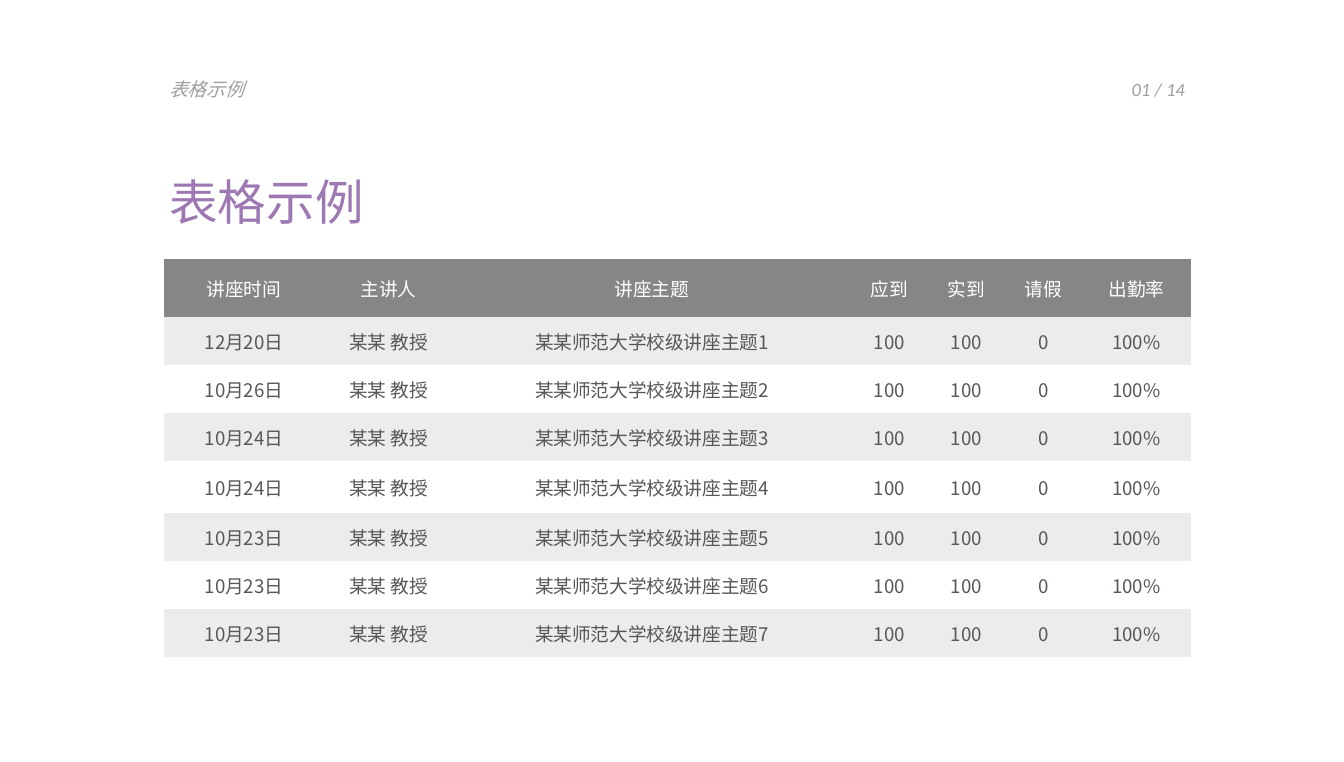
from pptx import Presentation
from pptx.dml.color import RGBColor
from pptx.enum.text import MSO_ANCHOR, MSO_AUTO_SIZE, PP_ALIGN
from pptx.oxml.ns import qn
from pptx.util import Emu, Pt

SCALE = 914400 / 134.4
CJK = "Noto Sans CJK SC"
NO_STYLE = "{2D5ABB26-0587-4C30-8999-92F81FD0307C}"
COLORS = {
    "header": "858687",
    "band": "EDECEC",
    "white": "FFFFFF",
    "text": "555759",
    "muted": "9E9FA0",
    "accent": "9E78B3",
}
COLUMNS = {
    "讲座时间": 160,
    "主讲人": 129,
    "讲座主题": 398,
    "应到": 77,
    "实到": 77,
    "请假": 77,
    "出勤率": 109,
}
ROW_HEIGHTS = [58, 48, 48, 48, 52, 48, 48, 48]
DATES = ["12月20日", "10月26日", "10月24日", "10月24日", "10月23日", "10月23日", "10月23日"]


def px(n):
    """Turn px into EMU."""
    return Emu(round(n * SCALE))


def set_attrs(obj, values):
    """Set each attribute of obj from a dict."""
    for name, value in values.items():
        setattr(obj, name, value)


def write(tf, text, color, size=10, font=CJK, italic=False, align=PP_ALIGN.LEFT):
    """Write one formatted line and return its paragraph."""
    p = tf.paragraphs[0]
    p.alignment = align
    r = p.add_run()
    r.text = text
    set_attrs(r.font, {"size": Pt(size), "name": font, "italic": italic, "bold": False})
    r.font.color.rgb = RGBColor.from_string(COLORS[color])
    ea = r.font._element.makeelement(qn("a:ea"), {"typeface": font})
    r.font._element.find(qn("a:latin")).addnext(ea)
    return p


def fill_box(sp, box, text, color, size=10, **style):
    """Place a text shape and write its line with exact spacing."""
    set_attrs(sp, dict(zip(("left", "top", "width", "height"), map(px, box))))
    tf = sp.text_frame
    set_attrs(tf, {
        "word_wrap": True,
        "auto_size": MSO_AUTO_SIZE.SHAPE_TO_FIT_TEXT,
        "vertical_anchor": MSO_ANCHOR.TOP,
    })
    p = write(tf, text, color, size, **style)
    set_attrs(p, {"line_spacing": Pt(size), "space_before": Pt(0)})


def add_label(s, box, text, **style):
    """Add a small italic header label."""
    sp = s.shapes.add_textbox(0, 0, 0, 0)
    fill_box(sp, box, text, "muted", italic=True, **style)


def fill_cell(cell, text, color, fill):
    """Fill one table cell with centred text."""
    set_attrs(cell, {
        "margin_left": px(1),
        "margin_right": px(1),
        "margin_top": px(1),
        "margin_bottom": 0,
        "vertical_anchor": MSO_ANCHOR.MIDDLE,
    })
    cell.fill.solid()
    cell.fill.fore_color.rgb = RGBColor.from_string(COLORS[fill])
    write(cell.text_frame, text, color, align=PP_ALIGN.CENTER)


def add_lecture_table(s, left, top):
    """Add the banded lecture attendance table."""
    rows = [list(COLUMNS)] + [
        [date, "某某 教授", f"某某师范大学校级讲座主题{n}", "100", "100", "0", "100%"]
        for n, date in enumerate(DATES, 1)
    ]
    widths = list(COLUMNS.values())
    frame = s.shapes.add_table(len(rows), len(widths), px(left), px(top),
                               px(sum(widths)), px(sum(ROW_HEIGHTS)))
    frame.element.xpath(".//a:tableStyleId")[0].text = NO_STYLE
    table = frame.table
    for column, width in zip(table.columns, widths):
        column.width = px(width)
    for i, (values, height) in enumerate(zip(rows, ROW_HEIGHTS)):
        table.rows[i].height = px(height)
        fill = "header" if i == 0 else "band" if i % 2 else "white"
        for j, text in enumerate(values):
            fill_cell(table.cell(i, j), text, "text" if i else "white", fill)


def main():
    """Build the slide and save it."""
    prs = Presentation()
    set_attrs(prs, {"slide_width": px(1344), "slide_height": px(762)})
    s = prs.slides.add_slide(prs.slide_layouts[5])
    add_lecture_table(s, 164, 259)
    add_label(s, (156, 75, 321, 32), "表格示例")
    fill_box(s.shapes.title, (156, 175, 495, 63), "表格示例", "accent", size=26)
    add_label(s, (1068, 75, 130, 32), "01 / 14", font="Calibri", align=PP_ALIGN.RIGHT)
    prs.save("out.pptx")


if __name__ == "__main__":
    main()
